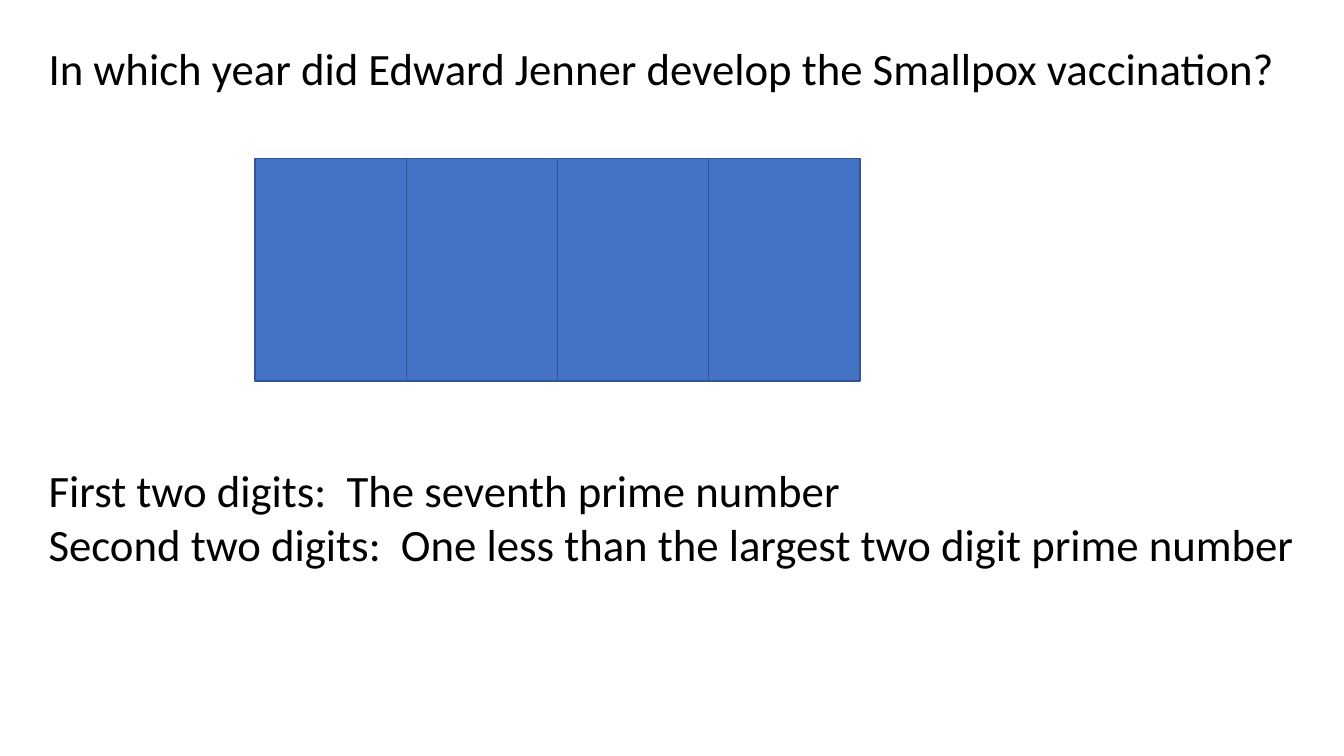
from pptx import Presentation
from pptx.dml.color import RGBColor
from pptx.enum.shapes import MSO_SHAPE as Shape
from pptx.enum.text import MSO_ANCHOR as Anchor, MSO_AUTO_SIZE as Fit, PP_ALIGN as Align
from pptx.oxml.xmlchemy import OxmlElement as Element
from pptx.util import Cm, Pt


def paint(code):
    return RGBColor.from_string(code)


class Quiz:
    font = "Calibri"
    size = 32
    ink = "000000"
    cover = "4472C4"
    edge = "325491"

    def __init__(self, deck):
        self.slide = deck.slides.add_slide(deck.slide_layouts[1])

    def fill(self, holder, text, left, top, width, height):
        """Place a placeholder and set its text as plain, left-aligned lines."""
        holder.left, holder.top = Cm(left), Cm(top)
        holder.width, holder.height = Cm(width), Cm(height)
        frame = holder.text_frame
        frame.text = text
        frame.word_wrap = True
        frame.auto_size = Fit.NONE
        frame.vertical_anchor = Anchor.TOP
        for para in frame.paragraphs:
            para.alignment = Align.LEFT
            para.space_before = Pt(0)
            props = para._p.get_or_add_pPr()
            props.set("marL", "0")
            props.set("indent", "0")
            props.append(Element("a:buNone"))
            for run in para.runs:
                run.font.name = self.font
                run.font.size = Pt(self.size)
                run.font.color.rgb = paint(self.ink)

    def title(self, text, *box):
        self.fill(self.slide.shapes.title, text, *box)

    def body(self, lines, *box):
        self.fill(self.slide.placeholders[1], "\n".join(lines), *box)

    def tile(self, left, top, width, height):
        tile = self.slide.shapes.add_shape(
            Shape.RECTANGLE, Cm(left), Cm(top), Cm(width), Cm(height))
        tile.shadow.inherit = False
        tile.fill.solid()
        tile.fill.fore_color.rgb = paint(self.cover)
        tile.line.color.rgb = paint(self.edge)
        tile.line.width = Pt(1)


def main():
    deck = Presentation()
    deck.slide_width, deck.slide_height = Cm(33.87), Cm(19.05)
    quiz = Quiz(deck)
    quiz.title("In which year did Edward Jenner develop the Smallpox vaccination?",
               0.97, 0.91, 31.78, 1.63)
    wide = 3.81
    for digit in range(4):
        quiz.tile(6.43 + digit * wide, 3.99, wide, 5.61)
    quiz.body(["First two digits:  The seventh prime number",
               "Second two digits:  One less than the largest two digit prime number"],
              0.97, 11.53, 32.23, 3)
    deck.save("out.pptx")


if __name__ == "__main__":
    main()
